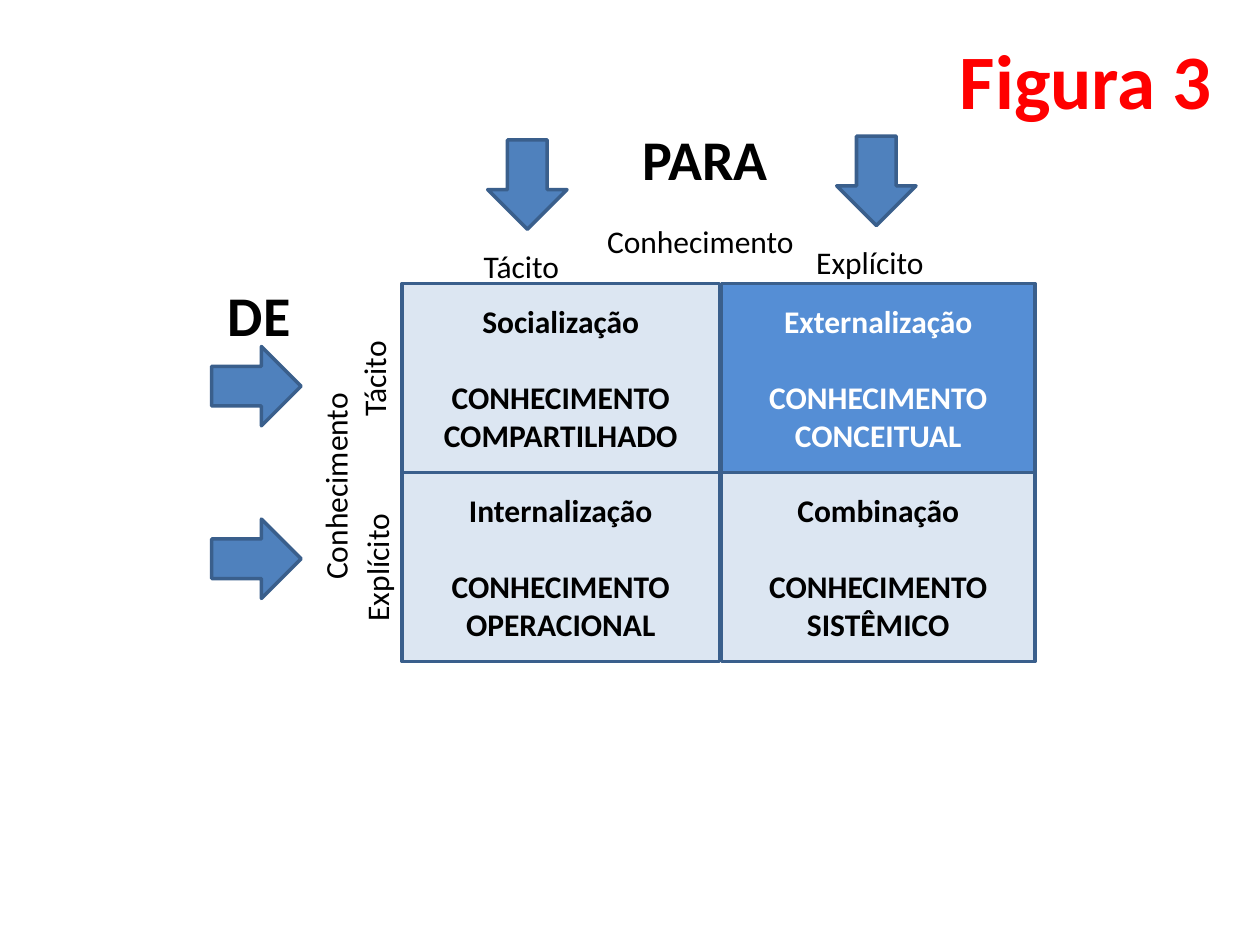
from itertools import product

from pptx import Presentation
from pptx.dml.color import RGBColor
from pptx.enum.shapes import MSO_SHAPE as Shape
from pptx.enum.text import MSO_ANCHOR as Anchor, MSO_AUTO_SIZE as AutoSize, PP_ALIGN as Align
from pptx.util import Inches, Pt

BLACK = RGBColor(0x00, 0x00, 0x00)
WHITE = RGBColor(0xFF, 0xFF, 0xFF)
RED = RGBColor(0xFF, 0x00, 0x00)
PALE = RGBColor(0xDC, 0xE6, 0xF2)
BLUE = RGBColor(0x55, 0x8E, 0xD5)
ARROW = RGBColor(0x4F, 0x81, 0xBD)
OUTLINE = RGBColor(0x3A, 0x5F, 0x8C)

COLUMNS, ROWS = 100, 75


class Board:
    font = "Calibri"
    body = 18

    def __init__(self, deck):
        self.page = deck.slides.add_slide(deck.slide_layouts[6])
        self.column = deck.slide_width / COLUMNS
        self.row = deck.slide_height / ROWS

    def area(self, left, top, width, height):
        return (round(left * self.column), round(top * self.row),
                round(width * self.column), round(height * self.row))

    def style(self, para, size, color, bold):
        for span in para.runs:
            span.font.name = self.font
            span.font.size = Pt(size)
            span.font.bold = bold
            span.font.color.rgb = color

    def block(self, kind, area, fill, turn=0):
        shape = self.page.shapes.add_shape(kind, *self.area(*area))
        shape.shadow.inherit = False
        shape.fill.solid()
        shape.fill.fore_color.rgb = fill
        shape.line.color.rgb = OUTLINE
        shape.line.width = Pt(2)
        shape.rotation = turn
        return shape

    def cell(self, area, lines, fill, color):
        frame = self.block(Shape.RECTANGLE, area, fill).text_frame
        frame.word_wrap = True
        frame.vertical_anchor = Anchor.MIDDLE
        frame.text = "\n".join(lines)
        for para in frame.paragraphs:
            para.alignment = Align.CENTER
            self.style(para, self.body, color, True)
        frame.paragraphs[0].space_after = Pt(22)

    def arrow(self, left, top, turn=0):
        self.block(Shape.RIGHT_ARROW, (left, top, 7.1, 6.3), ARROW, turn)

    def label(self, text, area, size=body, color=BLACK, bold=False, turn=0, fill=None):
        box = self.page.shapes.add_textbox(*self.area(*area))
        box.rotation = turn
        if fill is not None:
            box.fill.solid()
            box.fill.fore_color.rgb = fill
        frame = box.text_frame
        frame.word_wrap = False
        frame.auto_size = AutoSize.SHAPE_TO_FIT_TEXT
        frame.text = text
        self.style(frame.paragraphs[0], size, color, bold)


def main():
    deck = Presentation()
    deck.slide_width, deck.slide_height = Inches(10), Inches(7.5)
    board = Board(deck)

    cells = [
        (["Socialização", "CONHECIMENTO COMPARTILHADO"], PALE, BLACK),
        (["Externalização", "CONHECIMENTO CONCEITUAL"], BLUE, WHITE),
        (["Internalização", "CONHECIMENTO", "OPERACIONAL"], PALE, BLACK),
        (["Combinação", "CONHECIMENTO", "SISTÊMICO"], PALE, BLACK),
    ]
    places = product((22.5, 37.5), ((31.9, 25.2), (57.25, 24.9)))
    for (top, (left, width)), (lines, fill, color) in zip(places, cells):
        board.cell((left, top, width, 15), lines, fill, color)

    board.label("Tácito", (37.4, 19.1, 8.1, 4))
    board.label("Explícito", (63.8, 18.8, 10.6, 4))
    board.label("Conhecimento", (18.1, 36.5, 17, 4), turn=270)
    board.label("Tácito", (25.6, 28, 8.1, 4), turn=270)
    board.label("Explícito", (24.6, 43, 10.6, 4), turn=270)
    board.label("DE", (17.1, 21.8, 7, 6.4), size=32, bold=True)
    board.label("PARA", (50, 9.4, 12.1, 6.4), size=32, bold=True)

    for top in (27.5, 41.2):
        board.arrow(16.8, top)
    for left, top in ((38.3, 11.5), (66, 11.2)):
        board.arrow(left, top, turn=90)

    board.label("Conhecimento", (47.2, 17.1, 17, 4), fill=WHITE)
    board.label("Figura 3", (75.2, 2.1, 22.2, 8.4), size=44, color=RED, bold=True)
    deck.save("out.pptx")


if __name__ == "__main__":
    main()
